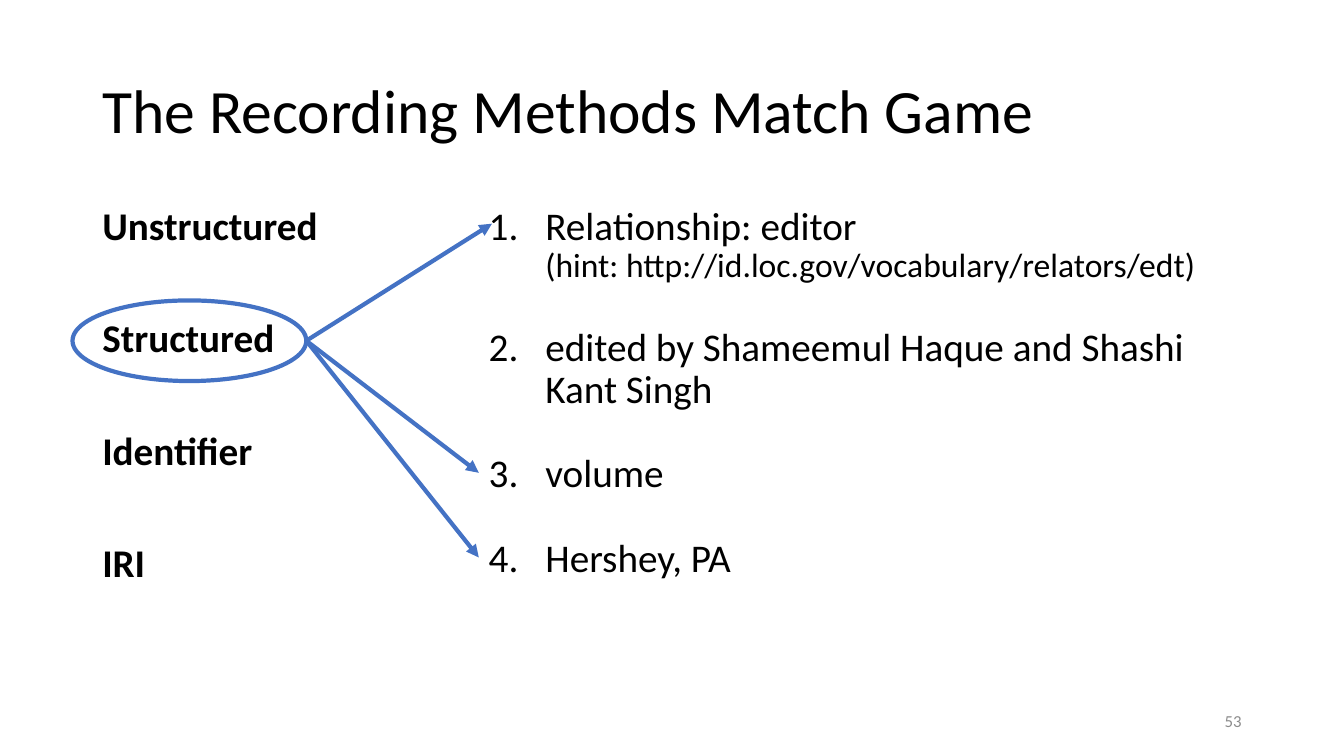
from dataclasses import dataclass

from lxml.etree import SubElement
from pptx import Presentation
from pptx.dml.color import RGBColor
from pptx.enum.shapes import MSO_CONNECTOR as Link, MSO_SHAPE as Form
from pptx.enum.text import MSO_ANCHOR as Anchor, PP_ALIGN as Align
from pptx.oxml.ns import qn
from pptx.slide import Slide
from pptx.util import Pt

BLACK = RGBColor(0x00, 0x00, 0x00)
GRAY = RGBColor(0x8C, 0x8C, 0x8C)
BLUE = RGBColor(0x44, 0x72, 0xC4)
FONT = "Calibri"
STROKE = Pt(3)
INDENT = Pt(40.5)
HINT = Pt(24)


@dataclass(frozen=True)
class Block:
    lines: tuple[str, ...]
    left: float
    top: float
    width: float
    height: float
    size: float
    gap: float = 0
    color: RGBColor = BLACK
    bold: bool = False
    listed: bool = False
    spacing: float = 0.9
    anchor: Anchor = Anchor.TOP
    align: Align = Align.LEFT


METHODS = ("Unstructured", "Structured", "Identifier", "IRI")
ITEMS = (
    "Relationship: editor\v(hint: http://id.loc.gov/vocabulary/relators/edt)",
    "edited by Shameemul Haque and Shashi Kant Singh",
    "volume",
    "Hershey, PA",
)
BLOCKS = (
    Block(("The Recording Methods Match Game",), 66, 28.8, 828, 104.4, 44,
          anchor=Anchor.MIDDLE),
    Block(METHODS, 66, 144, 408, 342.7, 28, gap=50, bold=True),
    Block(ITEMS, 342, 144, 551.5, 342.7, 28, gap=30, listed=True),
    Block(("53",), 678, 500.4, 216, 28.8, 12, color=GRAY, spacing=1,
          anchor=Anchor.MIDDLE, align=Align.RIGHT),
)
RING = (51.8, 214.6, 167, 57.6)
TARGETS = ((351.4, 159.8), (342, 337.7), (342, 398.2))


def number(para) -> None:
    """Turn a paragraph into an item of a numbered list."""
    props = para._p.get_or_add_pPr()
    props.set("marL", str(INDENT))
    props.set("indent", str(-INDENT))
    SubElement(props, qn("a:buFont"), typeface="+mj-lt")
    SubElement(props, qn("a:buAutoNum"), type="arabicPeriod")


def write(slide: Slide, block: Block) -> None:
    box = slide.shapes.add_textbox(
        Pt(block.left), Pt(block.top), Pt(block.width), Pt(block.height))
    frame = box.text_frame
    frame.word_wrap = True
    frame.vertical_anchor = block.anchor
    frame.text = block.lines[0]
    for line in block.lines[1:]:
        frame.add_paragraph().text = line
    for index, para in enumerate(frame.paragraphs):
        para.alignment = block.align
        para.line_spacing = block.spacing
        para.space_before = Pt(block.gap if index else 0)
        if block.listed:
            number(para)
        for run in para.runs:
            font = run.font
            font.name = FONT
            font.size = HINT if run.text.startswith("(hint") else Pt(block.size)
            font.bold = block.bold
            font.color.rgb = block.color


def circle(slide: Slide) -> None:
    ring = slide.shapes.add_shape(Form.OVAL, *map(Pt, RING))
    ring.shadow.inherit = False
    ring.fill.background()
    ring.line.color.rgb = BLUE
    ring.line.width = STROKE


def arrow(slide: Slide, x: float, y: float) -> None:
    """Point from the right edge of the ring to a list item."""
    left, top, width, height = RING
    link = slide.shapes.add_connector(
        Link.STRAIGHT, Pt(left + width), Pt(top + height / 2), Pt(x), Pt(y))
    link.line.color.rgb = BLUE
    link.line.width = STROKE
    SubElement(link.line._get_or_add_ln(), qn("a:tailEnd"), type="triangle")
    SubElement(link._element.spPr, qn("a:effectLst"))


def main() -> None:
    deck = Presentation()
    deck.slide_width, deck.slide_height = Pt(960), Pt(540)
    slide = deck.slides.add_slide(deck.slide_layouts[6])
    for block in BLOCKS:
        write(slide, block)
    circle(slide)
    for x, y in TARGETS:
        arrow(slide, x, y)
    deck.save("out.pptx")


if __name__ == "__main__":
    main()
